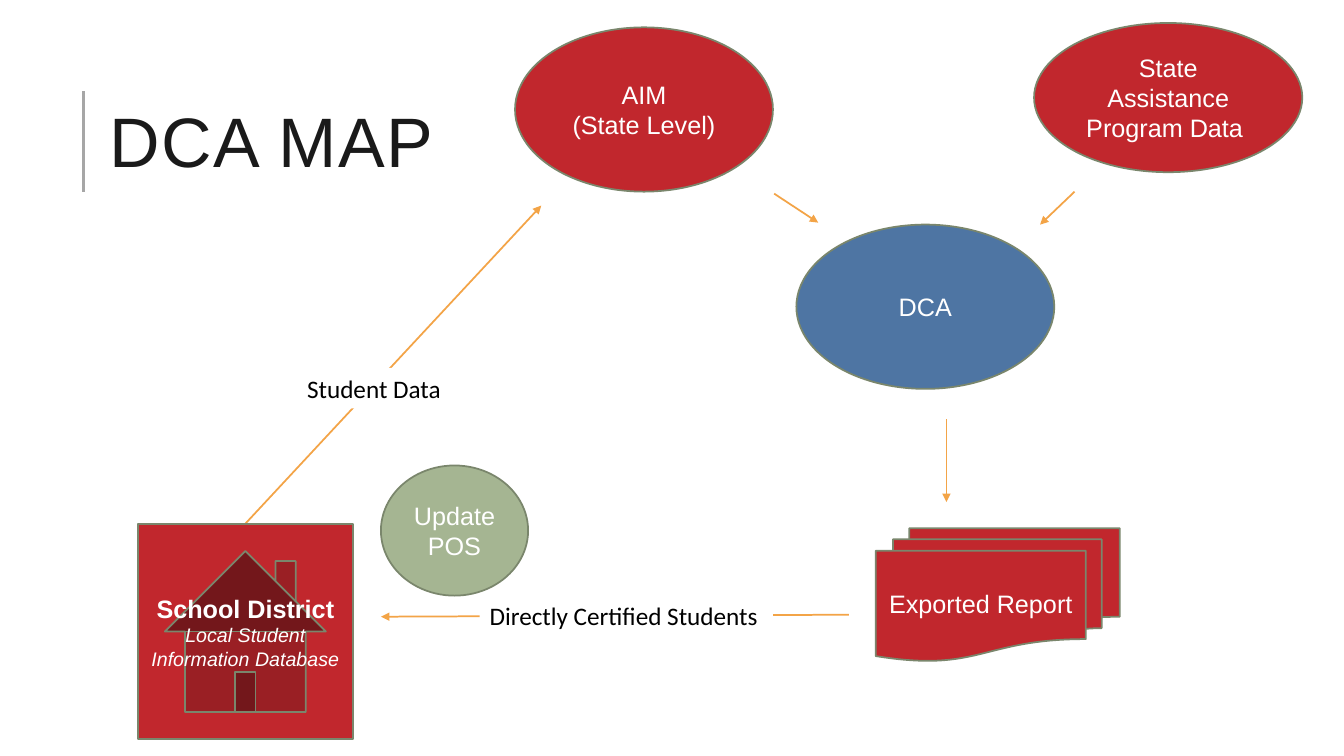
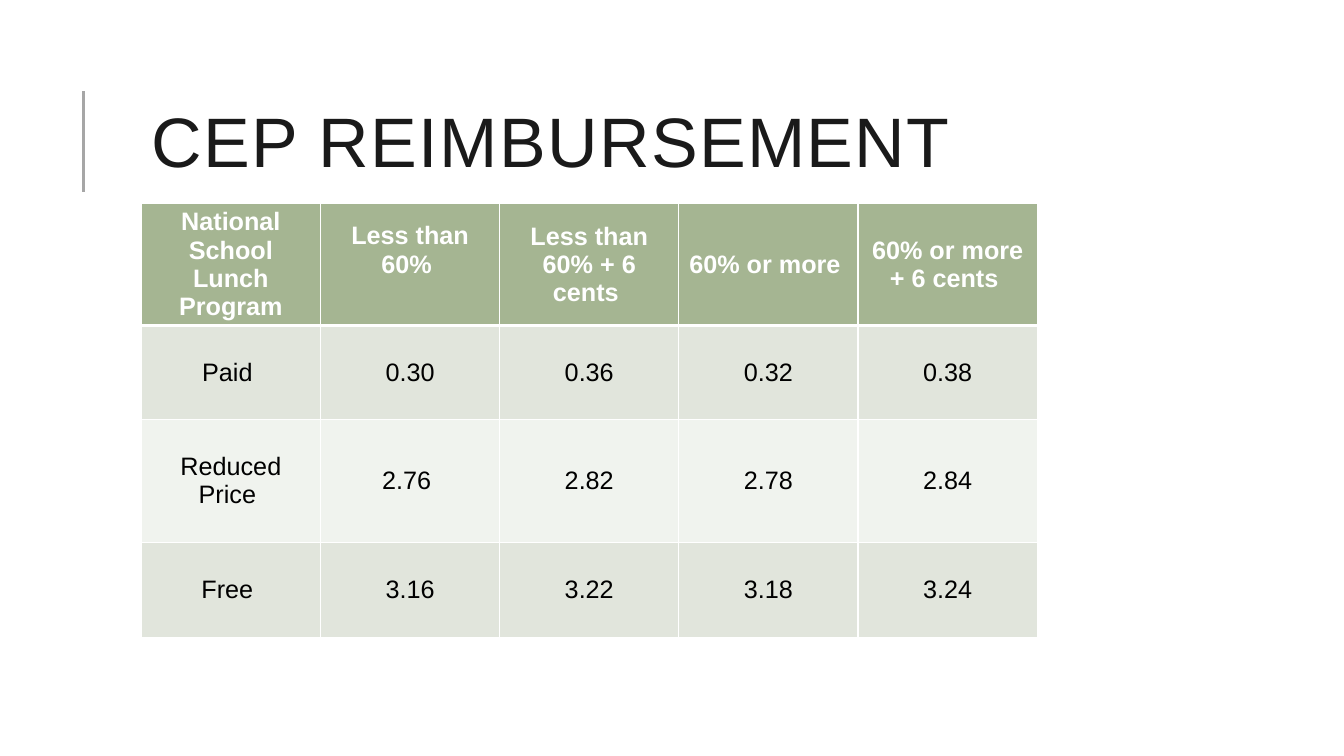
import pptx
import pptx.util
import pptx.dml.color
import pptx.enum.shapes
import pptx.enum.text
import pptx.oxml
import pptx.oxml.ns

Cm = pptx.util.Cm
Pt = pptx.util.Pt
SHAPE = pptx.enum.shapes.MSO_SHAPE
ALIGN = pptx.enum.text.PP_ALIGN
ANCHOR = pptx.enum.text.MSO_ANCHOR
AUTO_SIZE = pptx.enum.text.MSO_AUTO_SIZE

COLORS = {
    "title": "1A1A1A", "rule": "A6A6A6", "white": "FFFFFF", "black": "000000",
    "red": "C1272D", "blue": "4E75A3", "green": "A5B592", "outline": "7A866C",
    "arrow": "F3A447", "band_dark": "E1E5DC", "band_light": "F0F3EE",
}


def rgb(name):
    return pptx.dml.color.RGBColor.from_string(COLORS[name])


def write(frame, text, size=18, color="white", font="Arial", bold=False,
          italic=False, align=ALIGN.CENTER, line_spacing=None, tracking=None):
    """Add each line of text as a paragraph, filling an empty frame first."""
    for line in text.split("\n"):
        paragraph = frame.paragraphs[-1]
        if paragraph.runs:
            paragraph = frame.add_paragraph()
        paragraph.alignment = align
        if line_spacing:
            paragraph.line_spacing = line_spacing
        run = paragraph.add_run()
        run.text = line
        run.font.size = Pt(size)
        run.font.name = font
        run.font.bold = bold
        run.font.italic = italic
        run.font.color.rgb = rgb(color)
        if tracking:
            run.font._element.set("spc", str(tracking * 100))


def add_element(parent, tag, **attributes):
    element = pptx.oxml.parse_xml(f'<a:{tag} {pptx.oxml.ns.nsdecls("a")}/>')
    for key, value in attributes.items():
        element.set(key, str(value))
    parent.append(element)
    return element


def draw_line(slide, start, end, color, width, arrow=False):
    connector = slide.shapes.add_connector(
        pptx.enum.shapes.MSO_CONNECTOR.STRAIGHT, *map(Cm, (*start, *end)))
    connector.line.color.rgb = rgb(color)
    connector.line.width = Pt(width)
    if arrow:
        add_element(connector.line._get_or_add_ln(), "tailEnd", type="triangle")
    add_element(connector._element.spPr, "effectLst")


def draw_node(slide, kind, box, fill):
    node = slide.shapes.add_shape(kind, *map(Cm, box))
    node.shadow.inherit = False
    node.fill.solid()
    node.fill.fore_color.rgb = rgb(fill)
    node.line.color.rgb = rgb("outline")
    node.line.width = Pt(1.25)
    node.text_frame.word_wrap = True
    node.text_frame.vertical_anchor = ANCHOR.MIDDLE
    return node.text_frame


def draw_label(slide, box, text):
    label = slide.shapes.add_textbox(*map(Cm, box))
    label.fill.solid()
    label.fill.fore_color.rgb = rgb("white")
    label.text_frame.word_wrap = True
    write(label.text_frame, text, color="black", font="Calibri", align=ALIGN.LEFT)


def add_titled_slide(deck, text, box):
    slide = deck.slides.add_slide(deck.slide_layouts[5])
    draw_line(slide, (2.11, 4.83), (2.11, 2.29), "rule", 1.75)
    title = slide.shapes.title
    title.left, title.top, title.width, title.height = map(Cm, box)
    title.text_frame.auto_size = AUTO_SIZE.NONE
    title.text_frame.word_wrap = True
    title.text_frame.vertical_anchor = ANCHOR.MIDDLE
    write(title.text_frame, text, size=50, color="title", align=ALIGN.LEFT,
          line_spacing=0.8, tracking=1)
    return slide


def draw_data_flow(slide, left, top):
    def place(x, y, *size):
        return (left + x, top + y, *size)

    arrows = [
        ((2.69, 12.63), (10.16, 4.6)),
        ((20.37, 9.99), (20.37, 12.07)),
        ((17.91, 14.91), (6.12, 14.96)),
        ((23.6, 4.25), (22.73, 5.08)),
        ((16.03, 4.3), (17.14, 5.03)),
    ]
    for start, end in arrows:
        draw_line(slide, place(*start), place(*end), "arrow", 1.25, arrow=True)

    nodes = [
        (SHAPE.OVAL, (9.5, 0.11, 6.5, 4.14), "red", "AIM\n(State Level)"),
        (SHAPE.OVAL, (16.59, 5.08, 6.5, 4.14), "blue", "DCA"),
        (SHAPE.FLOWCHART_MULTIDOCUMENT, (18.59, 12.73, 6.15, 3.35), "red",
         "Exported Report"),
        (SHAPE.OVAL, (22.58, 0, 6.76, 3.76), "red",
         "State Assistance Program Data "),
        (SHAPE.OVAL, (6.12, 11.15, 3.71, 3.28), "green", "Update POS"),
    ]
    for kind, box, fill, text in nodes:
        write(draw_node(slide, kind, place(*box), fill), text)

    district = draw_node(slide, SHAPE.ACTION_BUTTON_HOME,
                         place(0, 12.63, 5.41, 5.41), "red")
    write(district, "School District", bold=True)
    write(district, "Local Student Information Database", size=14, italic=True)

    draw_label(slide, place(4.01, 8.69, 6.76, 1.02), "Student Data")
    draw_label(slide, place(8.61, 14.43, 7.39, 1.02), "Directly Certified Students")


def set_borders(cell, **widths):
    """Draw white borders, with widths in points by side: L, R, T, B."""
    properties = cell._tc.get_or_add_tcPr()
    for side, width in widths.items():
        border = add_element(properties, f"ln{side}", w=Pt(width))
        fill = add_element(border, "solidFill")
        add_element(fill, "srgbClr", val=COLORS["white"])


def draw_rates(slide, left, top, width):
    rates = [
        ["National School Lunch Program", "Less than 60% ",
         "Less than 60% + 6 cents ", "60% or more ", "60% or more + 6 cents "],
        ["Paid ", "0.30", "0.36", "0.32", "0.38"],
        ["Reduced Price ", "2.76 ", "2.82", "2.78", "2.84"],
        ["Free ", "3.16", "3.22", "3.18", "3.24"],
    ]
    heights = [3.07, 2.37, 3.1, 2.4]
    fills = ["green", "band_dark", "band_light", "band_dark"]
    table = slide.shapes.add_table(
        len(rates), len(rates[0]), Cm(left), Cm(top), Cm(width),
        Cm(sum(heights))).table
    for column in table.columns:
        column.width = Cm(width / len(rates[0]))
    for index, (values, height, fill) in enumerate(zip(rates, heights, fills)):
        table.rows[index].height = Cm(height)
        header = index == 0
        for cell, value in zip(table.rows[index].cells, values):
            set_borders(cell, L=1, R=1, T=3 if index == 1 else 1,
                        B=3 if header else 1)
            cell.fill.solid()
            cell.fill.fore_color.rgb = rgb(fill)
            cell.vertical_anchor = ANCHOR.MIDDLE
            cell.margin_top = cell.margin_bottom = Cm(0.1)
            write(cell.text_frame, value, bold=header,
                  color="white" if header else "black")
    # The short heading lines up with the first line of its neighbour.
    table.cell(0, 1).margin_bottom = Cm(0.82)


def main():
    deck = pptx.Presentation()
    deck.slide_width, deck.slide_height = Cm(33.87), Cm(19.05)
    dca_map = add_titled_slide(deck, "DCA MAP", (2.51, 1.63, 28.04, 4.17))
    draw_data_flow(dca_map, 3.48, 0.58)
    reimbursement = add_titled_slide(deck, "CEP REIMBURSEMENT",
                                     (3.56, 1.63, 27, 4.17))
    draw_rates(reimbursement, 3.56, 5.13, 22.58)
    deck.save("out.pptx")


if __name__ == "__main__":
    main()
